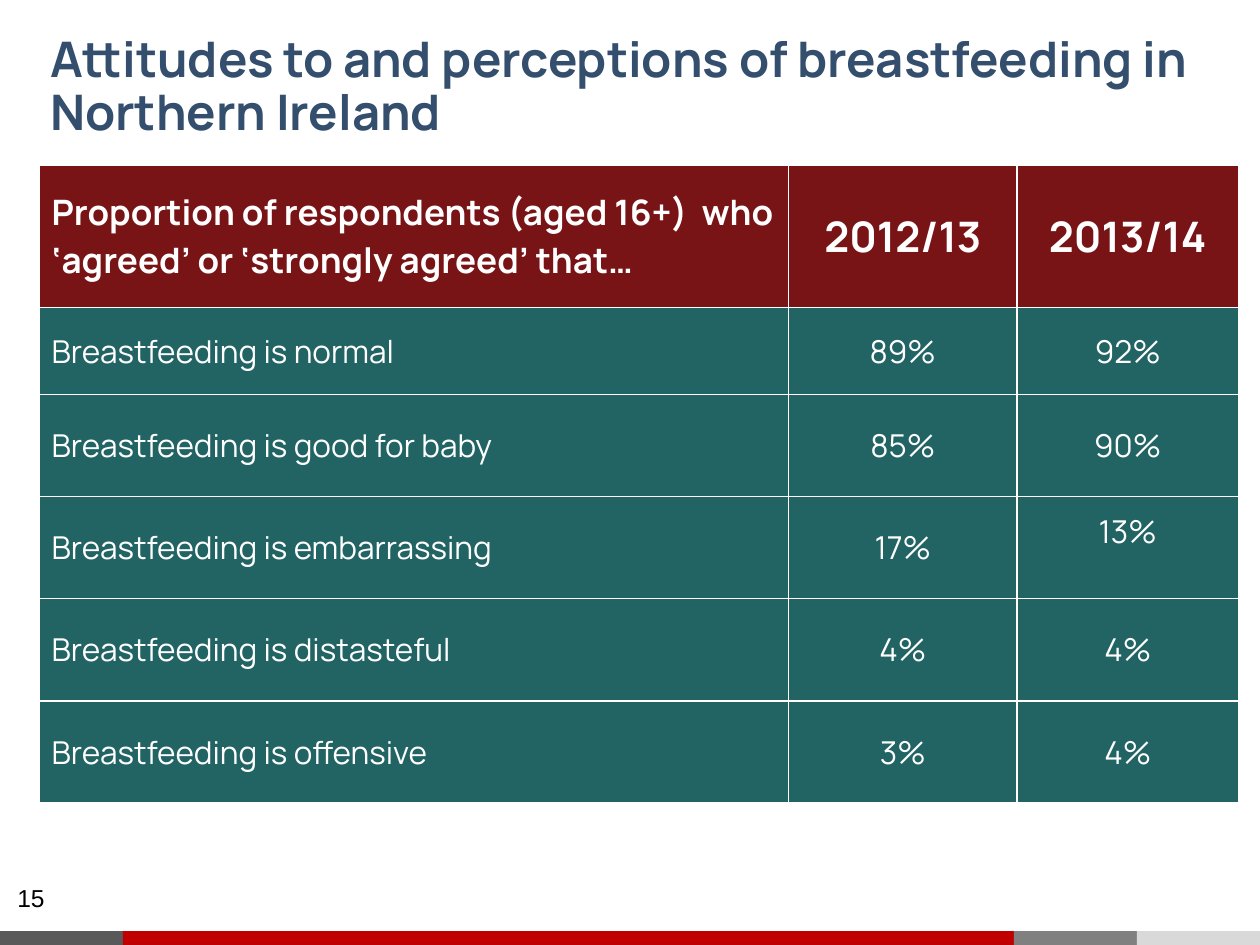
from lxml.etree import SubElement
from pptx import Presentation
from pptx.dml.color import RGBColor
from pptx.enum.shapes import MSO_SHAPE
from pptx.enum.text import MSO_ANCHOR, PP_ALIGN
from pptx.oxml.ns import qn
from pptx.util import Cm, Pt


def style_font(font, name, size, color, bold=False):
    font.name = name
    font.size = Pt(size)
    font.bold = bold
    font.color.rgb = RGBColor.from_string(color)


def add_borders(cell, color, width):
    properties = cell._tc.get_or_add_tcPr()
    for position, side in enumerate(("lnL", "lnR", "lnT", "lnB")):
        line = SubElement(properties, qn(f"a:{side}"), w=str(Pt(width)))
        fill = SubElement(line, qn("a:solidFill"))
        SubElement(fill, qn("a:srgbClr"), val=color)
        properties.insert(position, line)  # borders come before the cell fill


presentation = Presentation()
presentation.slide_width = Cm(25.4)
presentation.slide_height = Cm(19.05)
slide = presentation.slides.add_slide(presentation.slide_layouts[6])

# Footer bar
left = 0
for width, color in ((2.48, "595959"), (17.96, "C00000"), (2.48, "808080"), (2.48, "D9D9D9")):
    shape = slide.shapes.add_shape(MSO_SHAPE.RECTANGLE, Cm(left), Cm(18.77), Cm(width), Cm(0.28))
    shape.shadow.inherit = False
    shape.fill.solid()
    shape.fill.fore_color.rgb = RGBColor.from_string(color)
    shape.line.fill.background()
    left += width

# Title
title = slide.shapes.add_textbox(Cm(0.76), Cm(0.53), Cm(23.62), Cm(2.57)).text_frame
title.word_wrap = True
title.vertical_anchor = MSO_ANCHOR.BOTTOM
title.margin_top = title.margin_bottom = Cm(0.25)
paragraph = title.paragraphs[0]
paragraph.text = "Attitudes to and perceptions of breastfeeding in Northern Ireland"
paragraph.line_spacing = 0.9
style_font(paragraph.font, "Manrope", 28, "344E6D", bold=True)

# Page number
page_number = slide.shapes.add_textbox(Cm(0.1), Cm(17.68), Cm(1.4), Cm(0.86)).text_frame
page_number.word_wrap = True
paragraph = page_number.paragraphs[0]
paragraph.text = "15"
style_font(paragraph.font, "Arial", 14, "000000")

# Table of attitudes
rows = [
    ("Proportion of respondents (aged 16+)  who\n‘agreed’ or ‘strongly agreed’ that…", "2012/13", "2013/14"),
    ("Breastfeeding is normal", "89%", "92%"),
    ("Breastfeeding is good for baby", "85%", "90%"),
    ("Breastfeeding is embarrassing", "17%", "13%"),
    ("Breastfeeding is distasteful", "4%", "4%"),
    ("Breastfeeding is offensive", "3%", "4%"),
]
column_widths = (15.11, 4.6, 4.47)
row_heights = (2.87, 1.75, 2.06, 2.06, 2.06, 2.06)
table = slide.shapes.add_table(
    len(rows), len(column_widths), Cm(0.79), Cm(3.33), Cm(sum(column_widths)), Cm(sum(row_heights))
).table
for column, width in zip(table.columns, column_widths):
    column.width = Cm(width)
for row, height in zip(table.rows, row_heights):
    row.height = Cm(height)

for row_index, values in enumerate(rows):
    is_header = row_index == 0
    for column_index, value in enumerate(values):
        cell = table.cell(row_index, column_index)
        cell.fill.solid()
        cell.fill.fore_color.rgb = RGBColor.from_string("791416" if is_header else "226364")
        add_borders(cell, "FFFFFF", 1)
        cell.vertical_anchor = MSO_ANCHOR.MIDDLE
        cell.margin_left = cell.margin_right = Cm(0.25)
        cell.margin_top = cell.margin_bottom = Cm(0.25)
        cell.text = value
        size = (20 if column_index == 0 else 24) if is_header else 18
        for paragraph in cell.text_frame.paragraphs:
            paragraph.alignment = PP_ALIGN.CENTER if column_index else PP_ALIGN.LEFT
            style_font(paragraph.font, "Manrope", size, "FFFFFF", bold=is_header)

# The 13% value sits above the middle of its cell
table.cell(3, 2).margin_bottom = Cm(0.9)

presentation.save("out.pptx")
